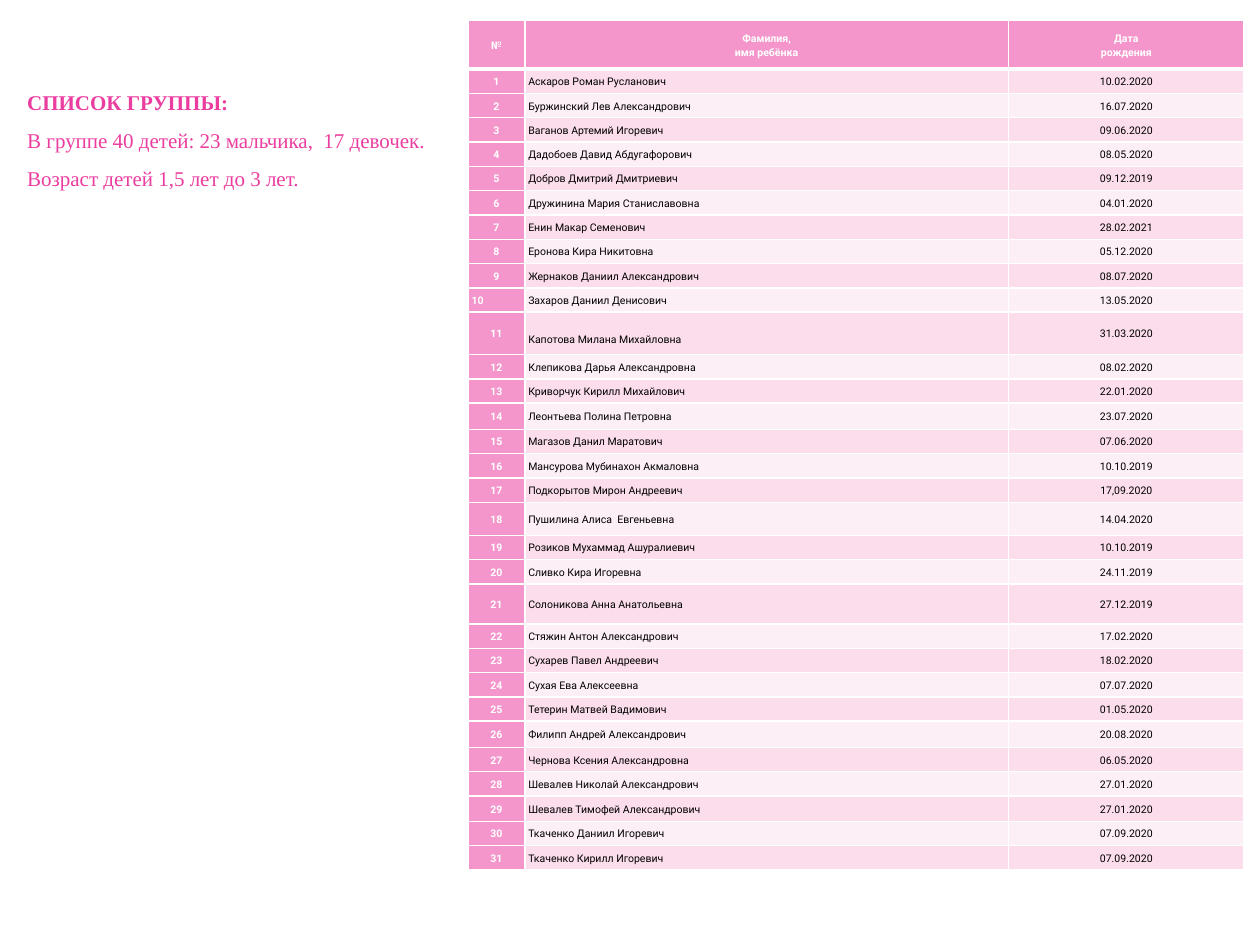
from dataclasses import dataclass

import lxml.etree
import pptx
import pptx.dml.color
import pptx.enum.text
import pptx.oxml.ns
import pptx.util

Pt = pptx.util.Pt
ALIGN = pptx.enum.text.PP_ALIGN


@dataclass(frozen=True)
class Theme:
    title: str = "EB3D9F"
    header: str = "F496CB"
    band_dark: str = "FBDDEC"
    band_light: str = "FDEFF6"
    light_text: str = "FFFFFF"
    dark_text: str = "000000"
    border: str = "FFFFFF"
    title_font: str = "Times New Roman"
    table_font: str = "Roboto"
    title_size: float = 12
    table_size: float = 6


THEME = Theme()

INTRO = [
    "СПИСОК ГРУППЫ:",
    "В группе 40 детей: 23 мальчика,  17 девочек.",
    "Возраст детей 1,5 лет до 3 лет.",
]
HEADINGS = ["№", "Фамилия,\nимя ребёнка", "Дата\nрождения"]
CHILDREN = [
    ("Аскаров Роман Русланович", "10.02.2020"),
    ("Буржинский Лев Александрович", "16.07.2020"),
    ("Ваганов Артемий Игоревич", "09.06.2020"),
    ("Дадобоев Давид Абдугафорович", "08.05.2020"),
    ("Добров Дмитрий Дмитриевич", "09.12.2019"),
    ("Дружинина Мария Станиславовна", "04.01.2020"),
    ("Енин Макар Семенович", "28.02.2021"),
    ("Еронова Кира Никитовна", "05.12.2020"),
    ("Жернаков Даниил Александрович", "08.07.2020"),
    ("Захаров Даниил Денисович", "13.05.2020"),
    ("Капотова Милана Михайловна", "31.03.2020"),
    ("Клепикова Дарья Александровна", "08.02.2020"),
    ("Криворчук Кирилл Михайлович", "22.01.2020"),
    ("Леонтьева Полина Петровна", "23.07.2020"),
    ("Магазов Данил Маратович", "07.06.2020"),
    ("Мансурова Мубинахон Акмаловна", "10.10.2019"),
    ("Подкорытов Мирон Андреевич", "17,09.2020"),
    ("Пушилина Алиса  Евгеньевна", "14.04.2020"),
    ("Розиков Мухаммад Ашуралиевич", "10.10.2019"),
    ("Сливко Кира Игоревна", "24.11.2019"),
    ("Солоникова Анна Анатольевна", "27.12.2019"),
    ("Стяжин Антон Александрович", "17.02.2020"),
    ("Сухарев Павел Андреевич", "18.02.2020"),
    ("Сухая Ева Алексеевна", "07.07.2020"),
    ("Тетерин Матвей Вадимович", "01.05.2020"),
    ("Филипп Андрей Александрович", "20.08.2020"),
    ("Чернова Ксения Александровна", "06.05.2020"),
    ("Шевалев Николай Александрович", "27.01.2020"),
    ("Шевалев Тимофей Александрович", "27.01.2020"),
    ("Ткаченко Даниил Игоревич", "07.09.2020"),
    ("Ткаченко Кирилл Игоревич", "07.09.2020"),
]

# Table geometry in points; the row number is also the child's number
COLUMN_SHARES = [0.073, 0.623, 0.304]
ROW_HEIGHT = 13.9
SPECIAL_HEIGHTS = {0: 28, 11: 24.2, 14: 15, 18: 18.9, 21: 22.9, 26: 15, 29: 14.5}
LEFT_ALIGNED_NUMBER = 10
DOUBLE_SPACED_NAME = 11


def style_font(font, name, size, color, bold):
    font.name = name
    font.size = Pt(size)
    font.bold = bold
    font.color.rgb = pptx.dml.color.RGBColor.from_string(color)


def set_borders(cell, bottom_width):
    """Draw the four cell edges, which must precede the fill in the XML."""
    properties = cell._tc.get_or_add_tcPr()
    widths = {"lnL": 1, "lnR": 1, "lnT": 1, "lnB": bottom_width}
    for position, (edge, width) in enumerate(widths.items()):
        line = lxml.etree.Element(pptx.oxml.ns.qn(f"a:{edge}"), w=str(Pt(width)))
        fill = lxml.etree.SubElement(line, pptx.oxml.ns.qn("a:solidFill"))
        lxml.etree.SubElement(fill, pptx.oxml.ns.qn("a:srgbClr"), val=THEME.border)
        properties.insert(position, line)


def fill_cell(cell, text, fill, color, bold, alignment, spacing=1.15, bottom_width=1):
    cell.margin_left = cell.margin_right = Pt(2)
    cell.margin_top = cell.margin_bottom = Pt(0)
    cell.vertical_anchor = pptx.enum.text.MSO_ANCHOR.MIDDLE
    cell.fill.solid()
    cell.fill.fore_color.rgb = pptx.dml.color.RGBColor.from_string(fill)
    set_borders(cell, bottom_width)
    cell.text_frame.text = text
    for paragraph in cell.text_frame.paragraphs:
        paragraph.alignment = alignment
        paragraph.line_spacing = spacing
        style_font(paragraph.font, THEME.table_font, THEME.table_size, color, bold)


def add_children_table(slide, left, top, width):
    heights = [SPECIAL_HEIGHTS.get(row, ROW_HEIGHT) for row in range(len(CHILDREN) + 1)]
    frame = slide.shapes.add_table(
        len(heights), len(HEADINGS), Pt(left), Pt(top), Pt(width), Pt(sum(heights)))
    table = frame.table
    table.first_col = True
    table.horz_banding = False
    for column, share in zip(table.columns, COLUMN_SHARES):
        column.width = Pt(width * share)
    for row, height in zip(table.rows, heights):
        row.height = Pt(height)

    # Heading row
    for column, heading in enumerate(HEADINGS):
        fill_cell(table.cell(0, column), heading, THEME.header, THEME.light_text,
                  True, ALIGN.CENTER, bottom_width=3)

    # One banded row for each child
    for number, (name, birthday) in enumerate(CHILDREN, start=1):
        band = THEME.band_dark if number % 2 else THEME.band_light
        number_alignment = ALIGN.LEFT if number == LEFT_ALIGNED_NUMBER else ALIGN.CENTER
        name_spacing = 2.0 if number == DOUBLE_SPACED_NAME else 1.15
        fill_cell(table.cell(number, 0), str(number), THEME.header, THEME.light_text,
                  True, number_alignment)
        fill_cell(table.cell(number, 1), name, band, THEME.dark_text,
                  False, ALIGN.LEFT, name_spacing)
        fill_cell(table.cell(number, 2), birthday, band, THEME.dark_text,
                  False, ALIGN.CENTER)


def add_intro(slide, left, top, width, height):
    text_box = slide.shapes.add_textbox(Pt(left), Pt(top), Pt(width), Pt(height))
    text_frame = text_box.text_frame
    text_frame.word_wrap = True
    text_frame.auto_size = pptx.enum.text.MSO_AUTO_SIZE.SHAPE_TO_FIT_TEXT
    text_frame.text = "\n".join(INTRO)
    for index, paragraph in enumerate(text_frame.paragraphs):
        paragraph.line_spacing = 1.5
        style_font(paragraph.font, THEME.title_font, THEME.title_size,
                   THEME.title, index == 0)


def main():
    presentation = pptx.Presentation()
    presentation.slide_width = Pt(720)
    presentation.slide_height = Pt(540)
    slide = presentation.slides.add_slide(presentation.slide_layouts[6])
    add_children_table(slide, left=267.5, top=11.5, width=443.5)
    add_intro(slide, left=8.5, top=40.5, width=535, height=72.5)
    presentation.save("out.pptx")


if __name__ == "__main__":
    main()
